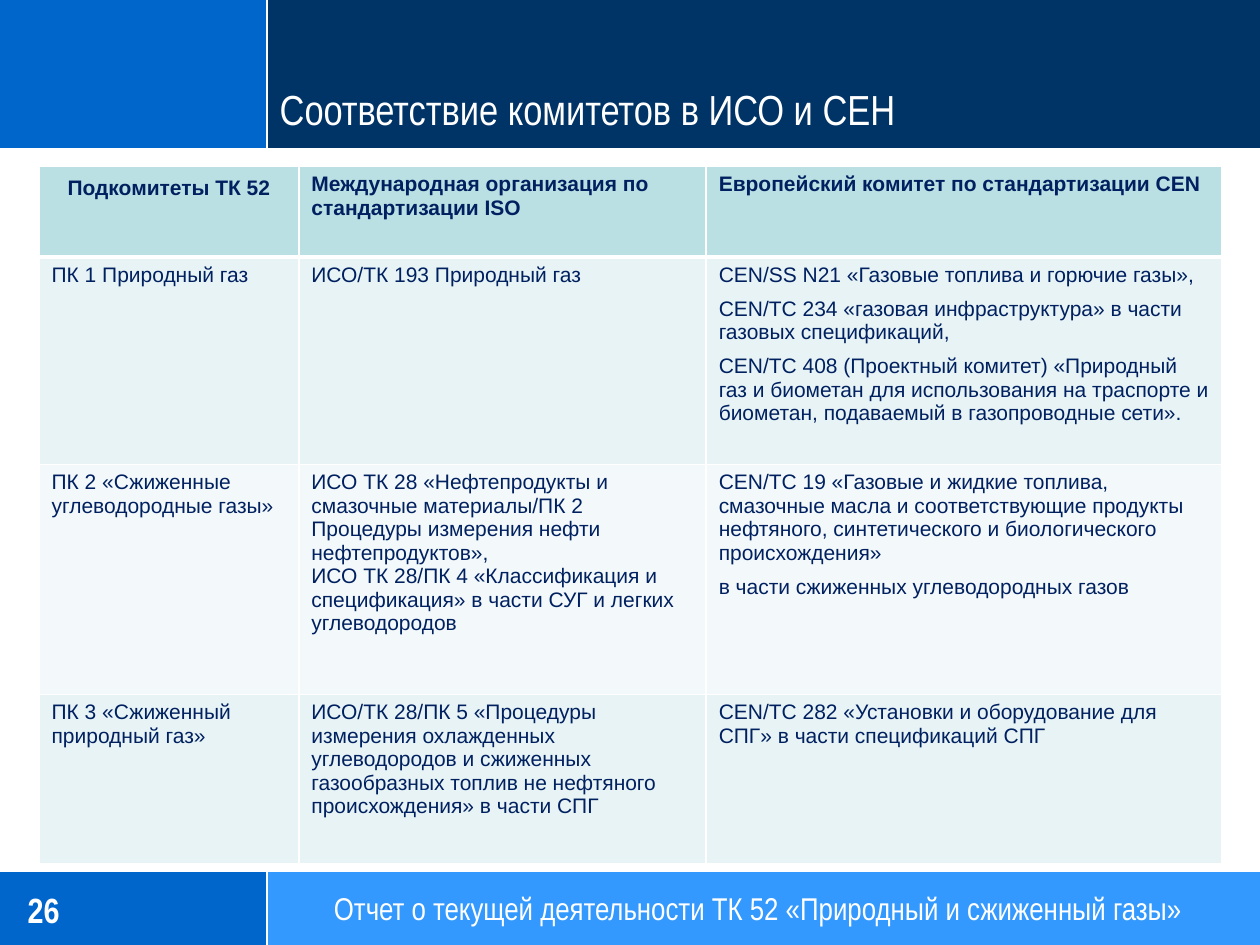
from collections import namedtuple

from lxml import etree
from pptx import Presentation
from pptx.dml.color import RGBColor
from pptx.enum.shapes import MSO_CONNECTOR, MSO_SHAPE
from pptx.enum.text import MSO_ANCHOR, PP_ALIGN
from pptx.oxml.ns import qn
from pptx.util import Inches, Pt

RECTANGLE = MSO_SHAPE.RECTANGLE
STRAIGHT = MSO_CONNECTOR.STRAIGHT
LEFT, CENTER = PP_ALIGN.LEFT, PP_ALIGN.CENTER
MIDDLE, BOTTOM = MSO_ANCHOR.MIDDLE, MSO_ANCHOR.BOTTOM

WIDTH, HEIGHT = 10, 7.5
SPLIT = 0.212
WHITE, BLUE, NAVY, SKY, INK = "FFFFFF", "0066CC", "003366", "3399FF", "002060"
HEADER_FILL, BAND_FILLS = "BBE0E3", ("E7F3F4", "F3F9FA")
COLUMNS = (2.06, 3.23, 4.09)
ROWS = (0.72, 1.65, 1.83, 1.35)
SPACED_CELLS = {(1, 2), (2, 2)}

CELLS = [
    [
        ["Подкомитеты ТК 52"],
        ["Международная организация по стандартизации ISO"],
        ["Европейский комитет по стандартизации CEN"],
    ],
    [
        ["ПК 1 Природный газ"],
        ["ИСО/ТК 193 Природный газ"],
        [
            "CEN/SS N21 «Газовые топлива и горючие газы»,",
            "CEN/TC 234 «газовая инфраструктура» в части газовых спецификаций,",
            "CEN/TC 408 (Проектный комитет) «Природный газ и биометан для использования "
            "на траспорте и биометан, подаваемый в газопроводные сети».",
        ],
    ],
    [
        ["ПК 2 «Сжиженные углеводородные газы»"],
        [
            "ИСО ТК 28 «Нефтепродукты и смазочные материалы/ПК 2 Процедуры измерения "
            "нефти нефтепродуктов»,",
            "ИСО ТК 28/ПК 4 «Классификация и спецификация» в части СУГ и легких углеводородов",
        ],
        [
            "CEN/TC 19 «Газовые и жидкие топлива, смазочные масла и соответствующие "
            "продукты нефтяного, синтетического и биологического происхождения»",
            "в части сжиженных углеводородных газов",
        ],
    ],
    [
        ["ПК 3 «Сжиженный природный газ»"],
        [
            "ИСО/ТК 28/ПК 5 «Процедуры измерения охлажденных углеводородов и сжиженных "
            "газообразных топлив не нефтяного происхождения» в части СПГ"
        ],
        ["CEN/TC 282 «Установки и оборудование для СПГ» в части спецификаций СПГ"],
    ],
]

Box = namedtuple("Box", "left top width height")


def color(value):
    return RGBColor.from_string(value)


def inset(box, left, top, width, height):
    return Box(
        box.left + left * box.width,
        box.top + top * box.height,
        width * box.width,
        height * box.height,
    )


def add_panel(page, box, fill):
    panel = page.shapes.add_shape(RECTANGLE, *map(Inches, box))
    panel.shadow.inherit = False
    panel.fill.solid()
    panel.fill.fore_color.rgb = color(fill)
    panel.line.fill.background()


def add_rule(page, *ends):
    rule = page.shapes.add_connector(STRAIGHT, *map(Inches, ends))
    rule.line.color.rgb = color(WHITE)
    rule.line.width = Pt(1.25)
    etree.SubElement(rule._element.spPr, qn("a:effectLst"))


def style_font(font, name, size, ink, bold):
    font.name, font.size, font.bold = name, Pt(size), bold
    font.color.rgb = color(ink)


def add_label(page, box, text, size, anchor=MIDDLE, align=LEFT, bold=False):
    frame = page.shapes.add_textbox(*map(Inches, box)).text_frame
    frame.word_wrap = True
    frame.vertical_anchor = anchor
    frame.margin_left = frame.margin_right = frame.margin_top = frame.margin_bottom = 0
    para = frame.paragraphs[0]
    para.text = text
    para.alignment = align
    style_font(para.font, "Arial Narrow", size, WHITE, bold)


def add_band(page, box, right_fill, edge):
    split = box.left + SPLIT * box.width
    add_panel(page, inset(box, 0, 0, SPLIT, 1), BLUE)
    add_panel(page, inset(box, SPLIT, 0, 1 - SPLIT, 1), right_fill)
    add_rule(page, split, box.top, split, box.top + box.height)
    add_rule(page, box.left, edge, box.left + box.width, edge)


def add_header(page, box):
    add_band(page, box, NAVY, box.top + box.height)
    title = "Соответствие комитетов в ИСО и СЕН"
    add_label(page, inset(box, 0.222, 0.475, 0.776, 0.424), title, 24, BOTTOM)


def add_footer(page, box):
    add_band(page, box, SKY, box.top)
    report = "Отчет о текущей деятельности ТК 52 «Природный и сжиженный газы»"
    add_label(page, inset(box, 0.022, 0.085, 0.163, 0.88), "26", 20, bold=True)
    add_label(page, inset(box, 0.228, 0, 0.747, 1), report, 18, align=CENTER)


def set_borders(cell, top, bottom):
    props = cell._tc.get_or_add_tcPr()
    for side, width in (("L", 1), ("R", 1), ("T", top), ("B", bottom)):
        line = etree.SubElement(props, qn(f"a:ln{side}"), w=str(Pt(width)))
        fill = etree.SubElement(line, qn("a:solidFill"))
        etree.SubElement(fill, qn("a:srgbClr"), val=WHITE)


def fill_cell(cell, row, column, texts):
    header = row == 0
    set_borders(cell, 3 if row == 1 else 1, 3 if header else 1)
    cell.fill.solid()
    cell.fill.fore_color.rgb = color(HEADER_FILL if header else BAND_FILLS[(row - 1) % 2])
    frame = cell.text_frame
    for index, text in enumerate(texts):
        para = frame.add_paragraph() if index else frame.paragraphs[0]
        para.text = text
        if index and (row, column) in SPACED_CELLS:
            para.space_before = Pt(6)
        if header and column == 0:
            para.alignment = CENTER
            para.line_spacing = 1.15
        style_font(para.font, "Arial", 12, INK, header)


def add_committees(page, box):
    table = page.shapes.add_table(len(ROWS), len(COLUMNS), *map(Inches, box)).table
    for column, share in zip(table.columns, COLUMNS):
        column.width = Inches(box.width * share / sum(COLUMNS))
    for row, share in zip(table.rows, ROWS):
        row.height = Inches(box.height * share / sum(ROWS))
    for row, line in enumerate(CELLS):
        for column, texts in enumerate(line):
            fill_cell(table.cell(row, column), row, column, texts)


def main():
    deck = Presentation()
    deck.slide_width, deck.slide_height = Inches(WIDTH), Inches(HEIGHT)
    page = deck.slides.add_slide(deck.slide_layouts[6])
    add_footer(page, Box(0, 6.91, WIDTH, 0.59))
    add_header(page, Box(0, 0, WIDTH, 1.18))
    add_committees(page, Box(0.31, 1.32, 9.39, 5.54))
    deck.save("out.pptx")


if __name__ == "__main__":
    main()
